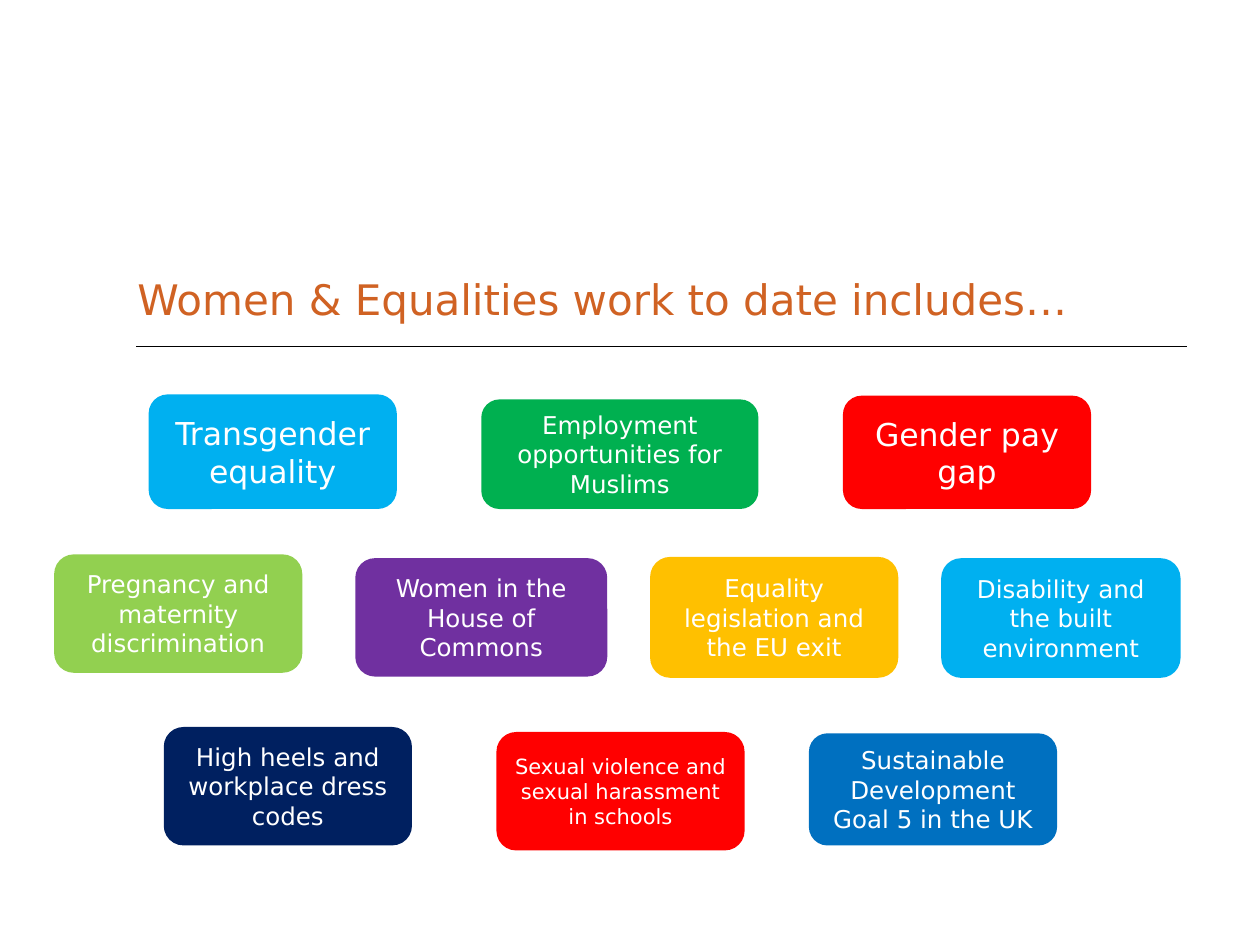
"""Build a slide of colour-coded topics in the Women & Equalities work to date."""
from dataclasses import dataclass

from lxml import etree
from pptx import Presentation
from pptx.dml.color import RGBColor
from pptx.enum.shapes import MSO_CONNECTOR, MSO_SHAPE
from pptx.enum.text import MSO_ANCHOR, MSO_AUTO_SIZE, PP_ALIGN
from pptx.oxml.ns import qn
from pptx.slide import Slide
from pptx.text.text import TextFrame
from pptx.util import Inches, Pt

ROUNDED = MSO_SHAPE.ROUNDED_RECTANGLE
STRAIGHT = MSO_CONNECTOR.STRAIGHT
MIDDLE = MSO_ANCHOR.MIDDLE
LEFT, CENTER = PP_ALIGN.LEFT, PP_ALIGN.CENTER
NO_FIT = MSO_AUTO_SIZE.NONE
TITLE_ONLY = 5
COLUMNS, ROWS = 100, 75
SLIDE_WIDTH, SLIDE_HEIGHT = Inches(10), Inches(7.5)


@dataclass(frozen=True)
class Theme:
    """Colours, font and type sizes of the slide."""
    font: str = "DejaVu Sans"
    title: str = "D06223"
    rule: str = "000000"
    label: str = "FFFFFF"
    sky: str = "00B0F0"
    green: str = "00B050"
    red: str = "FF0000"
    lime: str = "92D050"
    purple: str = "7030A0"
    amber: str = "FFC000"
    navy: str = "002060"
    blue: str = "0070C0"
    title_size: int = 24
    large: int = 18
    medium: int = 14
    small: int = 12
    rule_width: float = 0.75


THEME = Theme()


@dataclass(frozen=True)
class Topic:
    """A topic box placed in grid columns and rows."""
    text: str
    color: str
    column: float
    row: float
    height: float
    width: float = 19.7
    size: int = THEME.medium


TOPICS = (
    Topic("Transgender equality", THEME.sky, 11.8, 31.3, 9.1, size=THEME.large),
    Topic("Employment opportunities for Muslims", THEME.green, 38.2, 31.7, 8.7, 22),
    Topic("Gender pay gap", THEME.red, 66.9, 31.4, 9, size=THEME.large),
    Topic("Pregnancy and maternity discrimination", THEME.lime, 4.3, 44, 9.4),
    Topic("Women in the House of Commons", THEME.purple, 28.2, 44.3, 9.4, 20),
    Topic("Equality legislation and the EU exit", THEME.amber, 51.6, 44.2, 9.6),
    Topic("Disability and the built environment", THEME.sky, 74.7, 44.3, 9.5, 19),
    Topic("High heels and workplace dress codes", THEME.navy, 13, 57.7, 9.4),
    Topic("Sexual violence and sexual harassment in schools", THEME.red,
          39.4, 58.1, 9.4, size=THEME.small),
    Topic("Sustainable Development Goal 5 in the UK", THEME.blue, 64.2, 58.2, 8.9),
)


def across(columns: float) -> int:
    """Convert grid columns to a length."""
    return round(SLIDE_WIDTH * columns / COLUMNS)


def down(rows: float) -> int:
    """Convert grid rows to a length."""
    return round(SLIDE_HEIGHT * rows / ROWS)


def write(frame: TextFrame, text: str, size: int, color: str, align: PP_ALIGN) -> None:
    """Fill a text frame with one formatted paragraph."""
    frame.text = text
    frame.word_wrap = True
    frame.auto_size = NO_FIT
    frame.vertical_anchor = MIDDLE
    paragraph = frame.paragraphs[0]
    paragraph.alignment = align
    font = paragraph.runs[0].font
    font.name = THEME.font
    font.size = Pt(size)
    font.color.rgb = RGBColor.from_string(color)


def add_heading(page: Slide) -> None:
    """Place the title and the rule beneath it."""
    title = page.shapes.title
    title.left, title.top = across(9.9), down(20.7)
    title.width, title.height = across(84.3), down(6)
    write(title.text_frame, "Women & Equalities work to date includes…",
          THEME.title_size, THEME.title, LEFT)
    rule = page.shapes.add_connector(
        STRAIGHT, across(10.8), down(27.5), across(94.2), down(27.5))
    rule.line.color.rgb = RGBColor.from_string(THEME.rule)
    rule.line.width = Pt(THEME.rule_width)
    etree.SubElement(rule._element.spPr, qn("a:effectLst"))


def add_topic(page: Slide, topic: Topic) -> None:
    """Draw one rounded topic box."""
    box = page.shapes.add_shape(
        ROUNDED, across(topic.column), down(topic.row),
        across(topic.width), down(topic.height))
    box.shadow.inherit = False
    box.fill.solid()
    box.fill.fore_color.rgb = RGBColor.from_string(topic.color)
    box.line.fill.background()
    write(box.text_frame, topic.text, topic.size, THEME.label, CENTER)


def main() -> None:
    """Build and save the deck."""
    deck = Presentation()
    deck.slide_width, deck.slide_height = SLIDE_WIDTH, SLIDE_HEIGHT
    page = deck.slides.add_slide(deck.slide_layouts[TITLE_ONLY])
    add_heading(page)
    for topic in TOPICS:
        add_topic(page, topic)
    deck.save("out.pptx")


if __name__ == "__main__":
    main()
